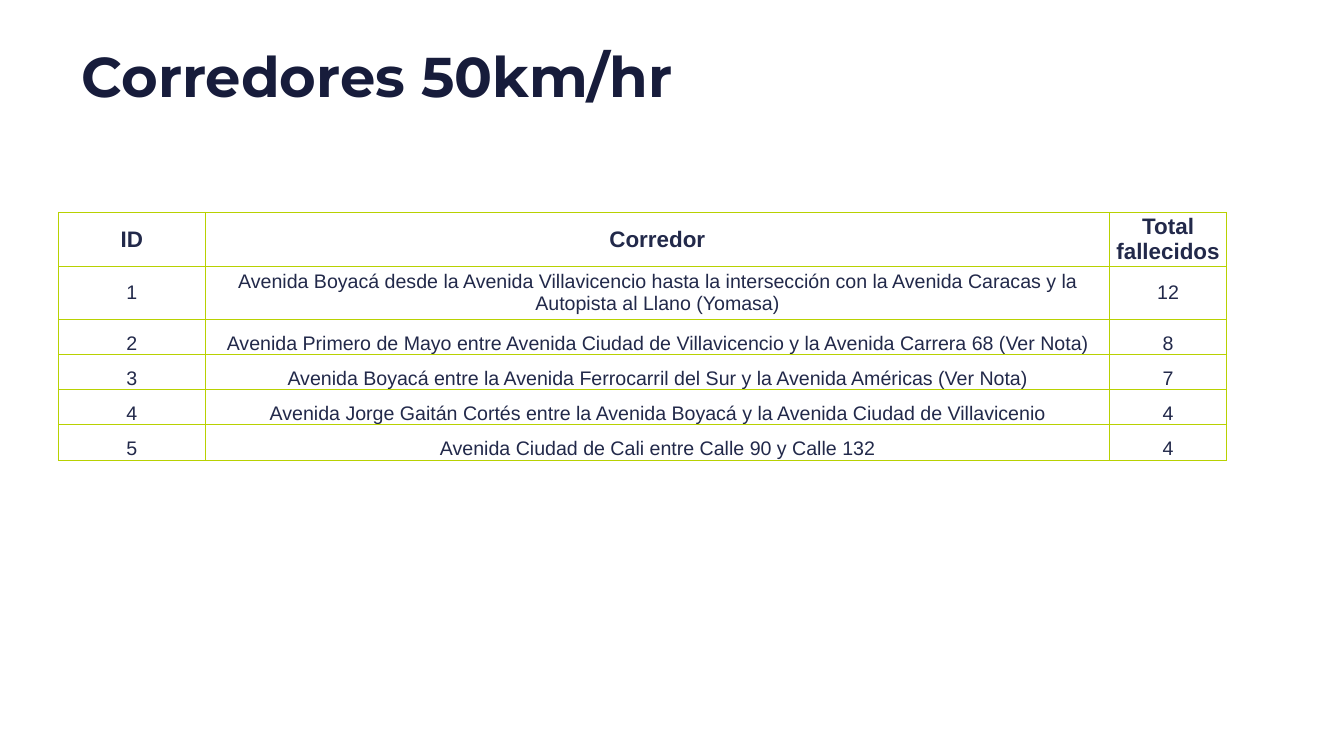
from dataclasses import dataclass

from lxml import etree
from pptx import Presentation
from pptx.dml.color import RGBColor
from pptx.enum.text import MSO_ANCHOR, PP_ALIGN
from pptx.oxml.ns import qn
from pptx.util import Pt

PX = 9144  # EMU per px, 100 px to the inch
CENTER, LEFT = PP_ALIGN.CENTER, PP_ALIGN.LEFT
MIDDLE, BOTTOM = MSO_ANCHOR.MIDDLE, MSO_ANCHOR.BOTTOM


@dataclass(frozen=True)
class Theme:
    title_font: str = "Montserrat"
    body_font: str = "Arial"
    title_color: str = "171C3B"
    body_color: str = "22294A"
    border_color: str = "B8D101"
    title_size: int = 80
    header_size: int = 32
    body_size: int = 28
    border_width: int = 1


THEME = Theme()

# Content
TITLE = "Corredores 50km/hr"
HEADER = ("ID", "Corredor", "Total fallecidos")
CORRIDORS = [
    ("Avenida Boyacá desde la Avenida Villavicencio hasta la intersección "
     "con la Avenida Caracas y la Autopista al Llano (Yomasa)", 12),
    ("Avenida Primero de Mayo entre Avenida Ciudad de Villavicencio "
     "y la Avenida Carrera 68 (Ver Nota)", 8),
    ("Avenida Boyacá entre la Avenida Ferrocarril del Sur "
     "y la Avenida Américas (Ver Nota)", 7),
    ("Avenida Jorge Gaitán Cortés entre la Avenida Boyacá "
     "y la Avenida Ciudad de Villavicenio", 4),
    ("Avenida Ciudad de Cali entre Calle 90 y Calle 132", 4),
]

# Layout in px
PAGE_SIZE = (2667, 1500)
TITLE_BOX = (157, 28, 2364, 194)
TABLE_ORIGIN = (116, 421)
COLUMN_WIDTHS = (291, 1795, 232)
TALL_ROWS, TALL, SHORT = 2, 104, 70


def px(*values):
    return [value * PX for value in values]


def set_margins(target, left, top, right, bottom):
    target.margin_left, target.margin_top, target.margin_right, target.margin_bottom = px(
        left, top, right, bottom)


def style_paragraph(para, align, font, size, color, bold):
    para.alignment = align
    for span in para.runs:
        span.font.name = font
        span.font.size = Pt(size)
        span.font.bold = bold
        span.font.color.rgb = RGBColor.from_string(color)


def add_borders(cell):
    properties = cell._tc.get_or_add_tcPr()
    for index, side in enumerate(("lnL", "lnR", "lnT", "lnB")):
        line = etree.Element(qn(f"a:{side}"), w=str(Pt(THEME.border_width)))
        fill = etree.SubElement(line, qn("a:solidFill"))
        etree.SubElement(fill, qn("a:srgbClr"), val=THEME.border_color)
        properties.insert(index, line)


def add_title(page):
    box = page.shapes.add_textbox(*px(*TITLE_BOX))
    frame = box.text_frame
    frame.word_wrap = True
    frame.vertical_anchor = BOTTOM
    set_margins(frame, 5, 5, 5, 5)
    frame.text = TITLE
    para = frame.paragraphs[0]
    para.line_spacing = 0.9
    style_paragraph(para, LEFT, THEME.title_font, THEME.title_size, THEME.title_color, True)


def add_corridor_table(page):
    rows = [HEADER] + [(number, *corridor) for number, corridor in enumerate(CORRIDORS, 1)]
    heights = [TALL if index < TALL_ROWS else SHORT for index in range(len(rows))]
    table = page.shapes.add_table(
        len(rows), len(HEADER), *px(*TABLE_ORIGIN, sum(COLUMN_WIDTHS), sum(heights))).table
    for column, width in zip(table.columns, px(*COLUMN_WIDTHS)):
        column.width = width
    for row_index, (row, values) in enumerate(zip(table.rows, rows)):
        row.height = heights[row_index] * PX
        is_header = row_index == 0
        size = THEME.header_size if is_header else THEME.body_size
        for cell, value in zip(row.cells, values):
            cell.text = str(value)
            cell.fill.background()
            cell.vertical_anchor = MIDDLE if row_index < TALL_ROWS else BOTTOM
            set_margins(cell, 1, 1, 1, 0)
            add_borders(cell)
            style_paragraph(cell.text_frame.paragraphs[0], CENTER, THEME.body_font,
                            size, THEME.body_color, is_header)


def main():
    deck = Presentation()
    deck.slide_width, deck.slide_height = px(*PAGE_SIZE)
    page = deck.slides.add_slide(deck.slide_layouts[6])
    add_title(page)
    add_corridor_table(page)
    deck.save("out.pptx")


if __name__ == "__main__":
    main()
